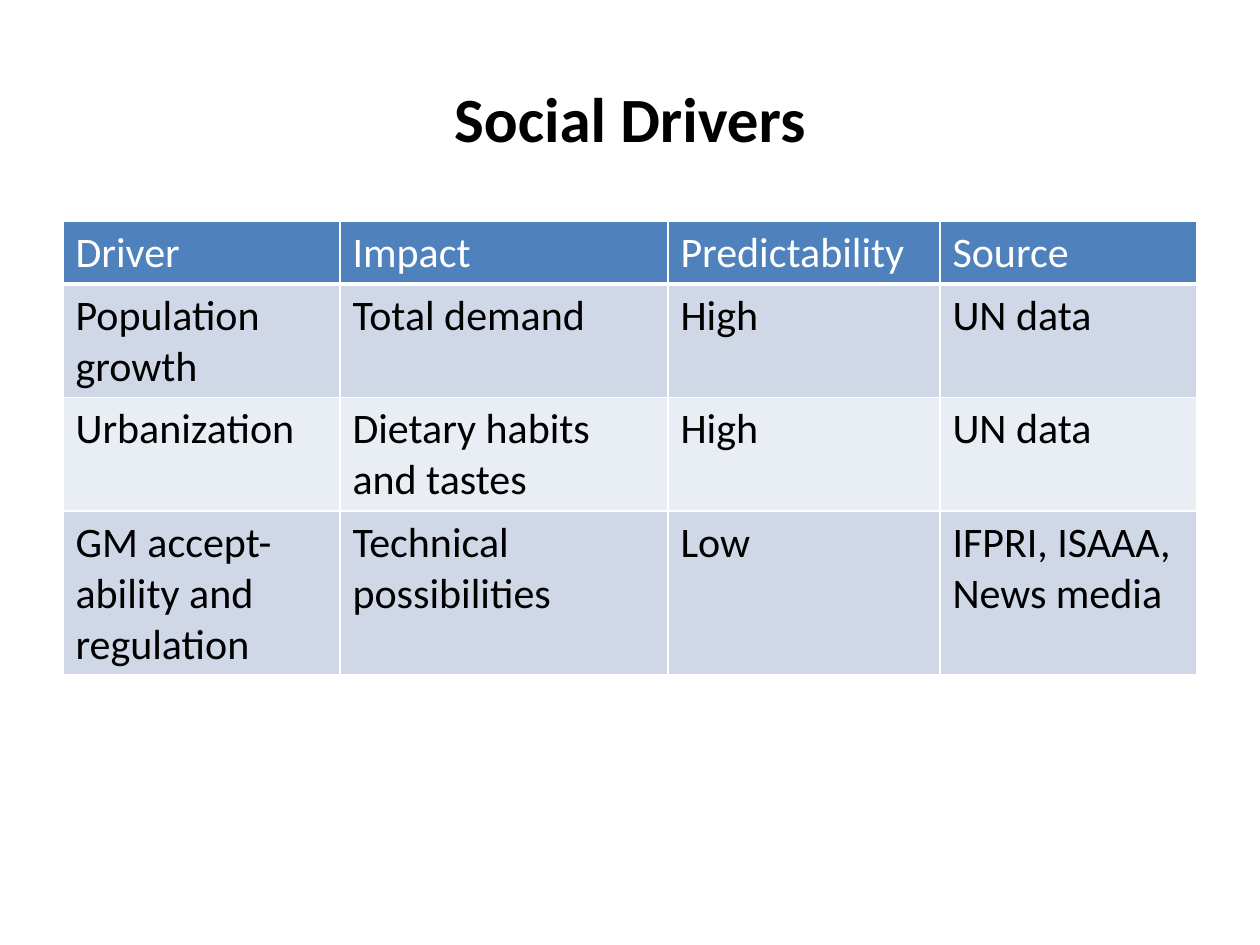
from lxml import etree
from pptx import Presentation
from pptx.dml.color import RGBColor
from pptx.enum import text
from pptx.oxml.ns import qn
from pptx.util import Pt

PX = 914400 / 126
BLACK, WHITE, BLUE = "000000", "FFFFFF", "4F81BD"
BANDS = ["D0D8E8", "E9EDF4"]

COLS = [277, 328, 272, 257]
ROWS = [
    ["Driver", "Impact", "Predictability", "Source"],
    ["Population growth", "Total demand", "High", "UN data"],
    ["Urbanization", "Dietary habits and tastes", "High", "UN data"],
    ["GM accept-ability and regulation", "Technical possibilities", "Low",
     "IFPRI, ISAAA,\nNews media"],
]


def px(n):
    return round(n * PX)


def rgb(code):
    return RGBColor.from_string(code)


def put(obj, **vals):
    """Set each named attribute on obj."""
    for name, val in vals.items():
        setattr(obj, name, val)


def edge(cell, side, width):
    """Draw one white cell border; side is L, R, T or B."""
    line = etree.SubElement(cell._tc.get_or_add_tcPr(), qn(f"a:ln{side}"),
                            w=str(Pt(width)))
    fill = etree.SubElement(line, qn("a:solidFill"))
    etree.SubElement(fill, qn("a:srgbClr"), val=WHITE)


class Deck:
    def __init__(self, font):
        self.font = font
        self.prs = Presentation()
        put(self.prs, slide_width=px(1260), slide_height=px(945))
        self.slide = self.prs.slides.add_slide(self.prs.slide_layouts[6])

    def words(self, frame, label, color, **look):
        """Fill a text frame with styled text."""
        frame.text = label
        for para in frame.paragraphs:
            for run in para.runs:
                put(run.font, name=self.font, **look)
                run.font.color.rgb = rgb(color)

    def title(self, label, x, y, w, h):
        box = self.slide.shapes.add_textbox(px(x), px(y), px(w), px(h))
        frame = box.text_frame
        put(frame, word_wrap=True, vertical_anchor=text.MSO_ANCHOR.MIDDLE)
        self.words(frame, label, BLACK, size=Pt(36), bold=True)
        frame.paragraphs[0].alignment = text.PP_ALIGN.CENTER

    def table(self, rows, cols, x, y, h, row_h):
        shape = self.slide.shapes.add_table(
            len(rows), len(cols), px(x), px(y), px(sum(cols)), px(h))
        grid = shape.table
        for col, width in zip(grid.columns, cols):
            col.width = px(width)
        for r, row in enumerate(rows):
            grid.rows[r].height = px(row_h)
            for c, label in enumerate(row):
                self.cell(grid.cell(r, c), label, r)
        shape.height = px(h)

    def cell(self, cell, label, r):
        head = r == 0
        put(cell, margin_left=Pt(7.2), margin_right=Pt(7.2),
            margin_top=Pt(3.6), margin_bottom=Pt(3.6))
        widths = {"L": 1, "R": 1, "T": 3 if r == 1 else 1, "B": 3 if head else 1}
        for side, width in widths.items():
            edge(cell, side, width)
        cell.fill.solid()
        cell.fill.fore_color.rgb = rgb(BLUE if head else BANDS[(r - 1) % 2])
        self.words(cell.text_frame, label, WHITE if head else BLACK,
                   size=Pt(24), bold=False)


def main():
    deck = Deck("Calibri")
    deck.title("Social Drivers", 63, 38, 1134, 158)
    deck.table(ROWS, COLS, 63, 221, 454, 52)
    deck.prs.save("out.pptx")


if __name__ == "__main__":
    main()
